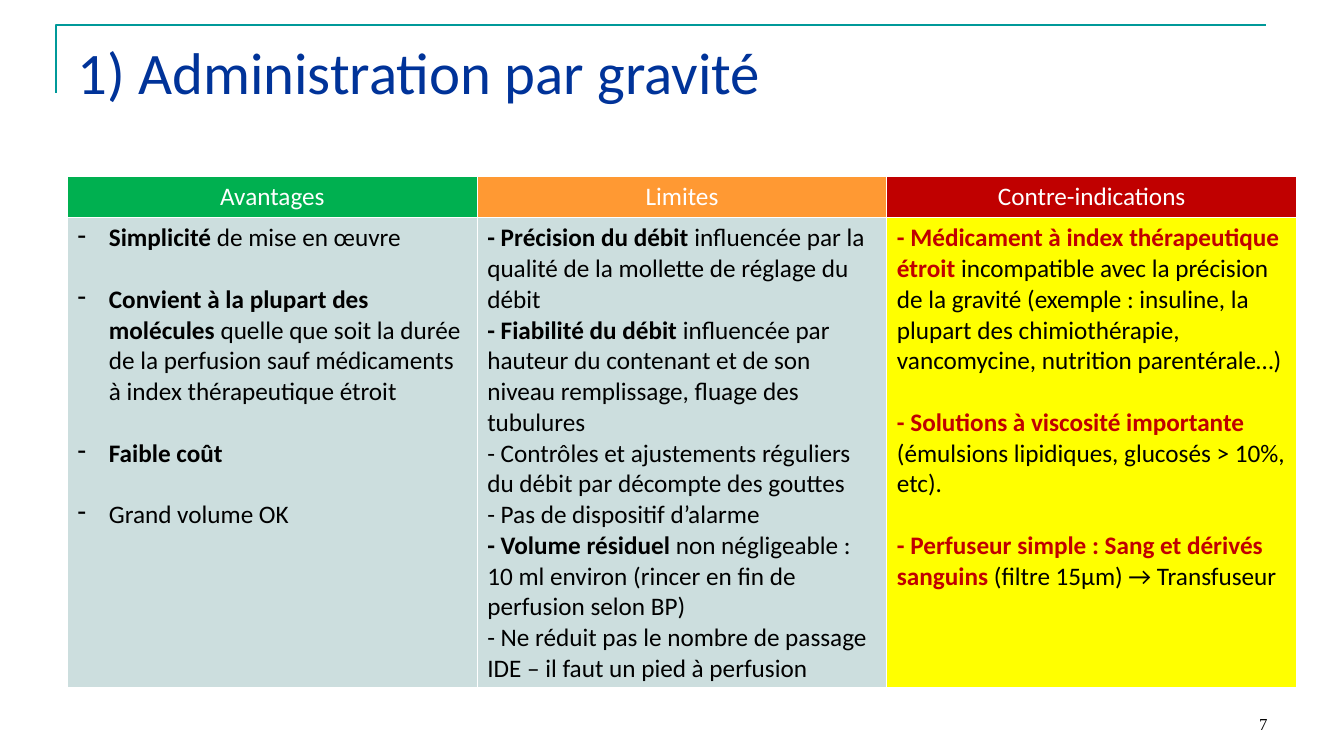
from pptx import Presentation
from pptx.dml.color import RGBColor
from pptx.enum.text import MSO_ANCHOR, PP_ALIGN
from pptx.util import Inches, Pt
from lxml.etree import SubElement
from pptx.oxml.ns import qn

COLORS = {
    "teal": "009999", "navy": "003399", "white": "FFFFFF", "black": "000000",
    "green": "00B050", "orange": "FF9933", "red": "C00000",
    "pale": "CCDEDE", "yellow": "FFFF00",
}
LINE_GAP = Pt(22)

COLUMNS = [
    {"head": "Avantages", "tint": "green", "fill": "pale", "mark": "black",
     "bullet": True, "gap": LINE_GAP, "items": [
         ("Simplicité", " de mise en œuvre"),
         ("Convient à la plupart des molécules ",
          "quelle que soit la durée de la perfusion sauf médicaments "
          "à index thérapeutique étroit"),
         ("Faible coût", ""),
         ("", "Grand volume OK"),
     ]},
    {"head": "Limites", "tint": "orange", "fill": "pale", "mark": "black",
     "bullet": False, "gap": Pt(0), "items": [
         ("- Précision du débit ",
          "influencée par la qualité de la mollette de réglage du débit"),
         ("- Fiabilité du débit ",
          "influencée par hauteur du contenant et de son niveau remplissage, "
          "fluage des tubulures"),
         ("", "- Contrôles et ajustements réguliers du débit par décompte des gouttes"),
         ("", "- Pas de dispositif d’alarme"),
         ("- Volume résiduel ",
          "non négligeable : 10 ml environ (rincer en fin de perfusion selon BP)"),
         ("", "- Ne réduit pas le nombre de passage IDE – il faut un pied à perfusion"),
     ]},
    {"head": "Contre-indications", "tint": "red", "fill": "yellow", "mark": "red",
     "bullet": False, "gap": LINE_GAP, "items": [
         ("- Médicament à index thérapeutique étroit ",
          "incompatible avec la précision de la gravité (exemple : insuline, "
          "la plupart des chimiothérapie, vancomycine, nutrition parentérale…)"),
         ("- Solutions à viscosité importante ",
          "(émulsions lipidiques, glucosés > 10%, etc)."),
         ("- Perfuseur simple : Sang et dérivés sanguins ",
          "(filtre 15µm) → Transfuseur"),
     ]},
]


def color(name):
    return RGBColor.from_string(COLORS[name])


def set_font(para, size, face="Calibri"):
    para.font.size = Pt(size)
    para.font.name = face


def add_run(para, text, tone, bold=False):
    if text:
        run = para.add_run()
        run.text = text
        run.font.bold = bold
        run.font.color.rgb = color(tone)


def add_text(slide, box, text, size, face, tone, align, anchor):
    frame = slide.shapes.add_textbox(*map(Inches, box)).text_frame
    frame.word_wrap = True
    frame.vertical_anchor = anchor
    para = frame.paragraphs[0]
    para.alignment = align
    set_font(para, size, face)
    add_run(para, text, tone)


def add_frame(slide):
    pen = slide.shapes.build_freeform(Inches(0.56), Inches(0.92))
    corner = [(0.56, 0.25), (12.56, 0.25)]
    pen.add_line_segments([(Inches(x), Inches(y)) for x, y in corner], close=False)
    shape = pen.convert_to_shape()
    shape.shadow.inherit = False
    shape.fill.background()
    shape.line.color.rgb = color("teal")
    shape.line.width = Pt(1.5)


def add_dash(para):
    props = para._p.get_or_add_pPr()
    props.set("marL", str(Inches(0.31)))
    props.set("indent", str(-Inches(0.31)))
    bullet = props.makeelement(qn("a:buChar"), {"char": "-"})
    props.insert_element_before(bullet, "a:tabLst", "a:defRPr", "a:extLst")


def paint(cell, fill):
    props = cell._tc.get_or_add_tcPr()
    for side in ("lnL", "lnR", "lnT", "lnB"):
        line = SubElement(props, qn("a:" + side), w=str(Pt(1)))
        solid = SubElement(line, qn("a:solidFill"))
        SubElement(solid, qn("a:srgbClr"), val=COLORS["white"])
    cell.fill.solid()
    cell.fill.fore_color.rgb = color(fill)


def fill_head(cell, column):
    paint(cell, column["tint"])
    para = cell.text_frame.paragraphs[0]
    para.alignment = PP_ALIGN.CENTER
    set_font(para, 18)
    add_run(para, column["head"], "white")


def fill_body(cell, column):
    paint(cell, column["fill"])
    frame = cell.text_frame
    last = len(column["items"]) - 1
    for index, (strong, plain) in enumerate(column["items"]):
        para = frame.add_paragraph() if index else frame.paragraphs[0]
        set_font(para, 18)
        para.space_after = column["gap"] if index < last else Pt(0)
        if column["bullet"]:
            add_dash(para)
        add_run(para, strong, column["mark"], True)
        add_run(para, plain, "black")


def add_grid(slide):
    box = map(Inches, (0.67, 1.75, 12.19, 5.07))
    table = slide.shapes.add_table(2, len(COLUMNS), *box).table
    table.first_row = False
    table.horz_banding = False
    table.rows[0].height = Inches(0.41)
    table.rows[1].height = Inches(4.66)
    for index, column in enumerate(COLUMNS):
        fill_head(table.cell(0, index), column)
        fill_body(table.cell(1, index), column)


def main():
    deck = Presentation()
    deck.slide_width = Inches(13.33)
    deck.slide_height = Inches(7.5)
    slide = deck.slides.add_slide(deck.slide_layouts[6])
    add_frame(slide)
    add_text(slide, (0.67, 0.3, 12, 1.25), "1) Administration par gravité",
             42, "Calibri", "navy", PP_ALIGN.LEFT, MSO_ANCHOR.TOP)
    add_grid(slide)
    add_text(slide, (9.56, 6.83, 3.11, 0.5), "7",
             12, "Times New Roman", "black", PP_ALIGN.RIGHT, MSO_ANCHOR.BOTTOM)
    deck.save("out.pptx")


if __name__ == "__main__":
    main()
